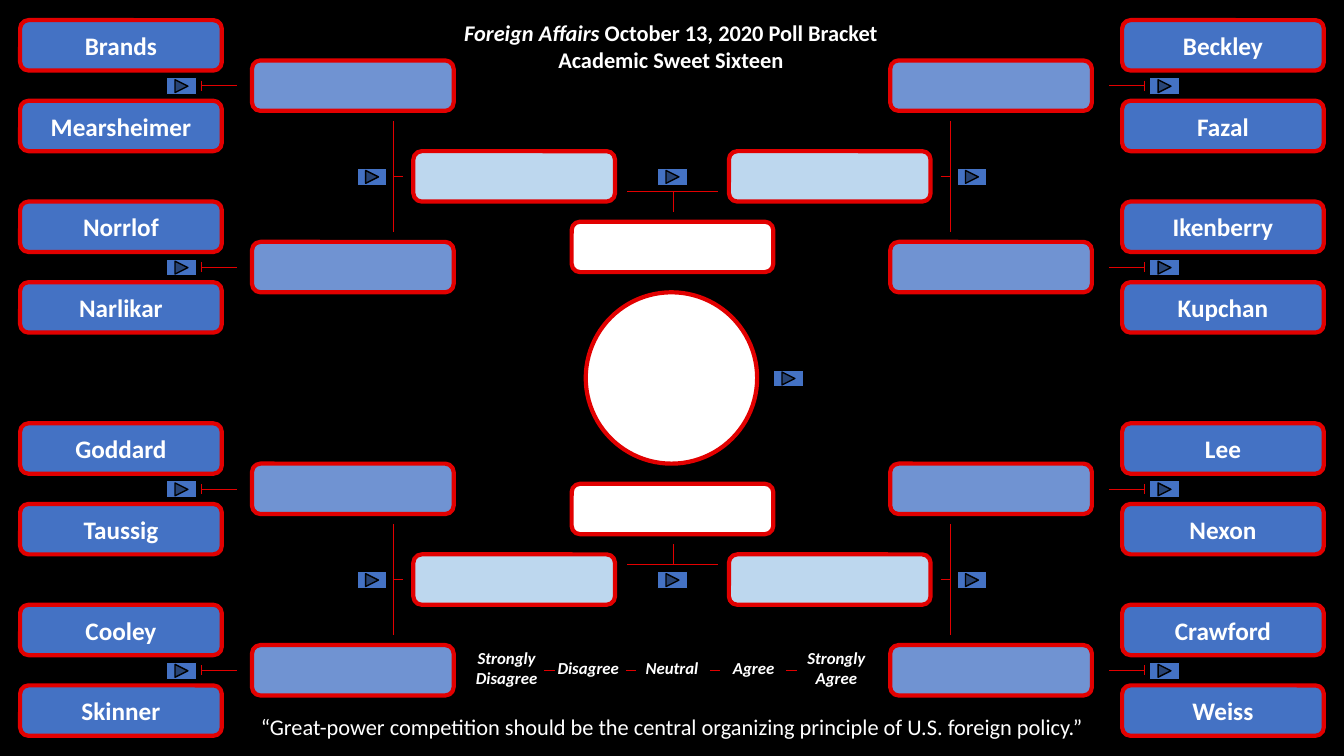
import pptx
import pptx.util
import pptx.dml.color
import pptx.enum.shapes
import pptx.enum.text
import pptx.oxml.ns
from lxml import etree

KIND = pptx.enum.shapes.MSO_SHAPE
WIDE = 13.33
RED, BLUE, MID, PALE, WHITE, BLACK = (
    "E20000", "4472C4", "7093D2", "BDD7EE", "FFFFFF", "000000")


def color(code):
    return pptx.dml.color.RGBColor.from_string(code)


def size(*units):
    """Turn inch grid units into lengths."""
    return [pptx.util.Cm(unit * 2.54) for unit in units]


def flip(x, width):
    """Left edge of the mirrored element."""
    return WIDE - x - width


class Board:
    def __init__(self, slide):
        self.slide = slide
        self.font = {"name": "Calibri", "bold": True, "italic": False}
        back = slide.background.fill
        back.solid()
        back.fore_color.rgb = color(BLACK)

    def label(self, para, text, **style):
        run = para.add_run()
        run.text = text
        for key, value in {**self.font, **style}.items():
            setattr(run.font, key, value)
        run.font.color.rgb = color(WHITE)
        para.alignment = pptx.enum.text.PP_ALIGN.CENTER

    def shape(self, kind, x, y, w, h, fill, edge=RED, weight=3):
        item = self.slide.shapes.add_shape(kind, *size(x, y, w, h))
        item.shadow.inherit = False
        item.fill.solid()
        item.fill.fore_color.rgb = color(fill)
        item.line.color.rgb = color(edge)
        item.line.width = pptx.util.Pt(weight)
        return item

    def slot(self, x, y, fill, name=""):
        item = self.shape(KIND.ROUNDED_RECTANGLE, x, y, 2, 0.5, fill)
        if name:
            frame = item.text_frame
            frame.vertical_anchor = pptx.enum.text.MSO_ANCHOR.MIDDLE
            self.label(frame.paragraphs[0], name, size=pptx.util.Pt(18))

    def button(self, x, y):
        self.shape(KIND.ACTION_BUTTON_FORWARD_OR_NEXT,
                   x, y, 0.3, 0.17, BLUE, BLACK, 1)

    def line(self, x, y, w=0, h=0):
        link = self.slide.shapes.add_connector(
            pptx.enum.shapes.MSO_CONNECTOR.STRAIGHT, *size(x, y, x + w, y + h))
        link.line.color.rgb = color(RED)
        link.line.width = pptx.util.Pt(0.5)
        props = link._element.spPr
        etree.SubElement(props, pptx.oxml.ns.qn("a:effectLst"))

    def text(self, x, y, w, h, lines, points, **style):
        """Each line is a list of (text, extra style) runs."""
        frame = self.slide.shapes.add_textbox(*size(x, y, w, h)).text_frame
        frame.word_wrap = True
        frame.auto_size = pptx.enum.text.MSO_AUTO_SIZE.SHAPE_TO_FIT_TEXT
        for i, runs in enumerate(lines):
            para = frame.add_paragraph() if i else frame.paragraphs[0]
            for words, extra in runs:
                self.label(para, words, size=pptx.util.Pt(points),
                           **{**style, **extra})


def main():
    deck = pptx.Presentation()
    deck.slide_width, deck.slide_height = size(WIDE, 7.5)
    board = Board(deck.slides.add_slide(deck.slide_layouts[6]))

    # First and second rounds: names, slot x, next x, tick x, stub x, button x
    sides = [
        (["Brands", "Mearsheimer", "Norrlof", "Narlikar",
          "Goddard", "Taussig", "Cooley", "Skinner"],
         0.2, 2.5, 2, 2, 1.65),
        (["Beckley", "Fazal", "Ikenberry", "Kupchan",
          "Lee", "Nexon", "Crawford", "Weiss"],
         flip(0.2, 2), flip(2.5, 2), 11.35, 11, 11.4),
    ]
    for names, first, second, tick, stub, push in sides:
        for i, top in enumerate([0, 1.8, 4, 5.8]):
            for j in range(2):
                board.slot(first, top + 0.2 + 0.8 * j, BLUE, names[2 * i + j])
            board.slot(second, top + 0.6, MID)
            board.line(tick, top + 0.8, h=0.1)
            board.line(stub, top + 0.85, w=0.35)
            board.button(push, top + 0.77)

    # Third round, in the upper and lower halves
    for top in (0, 4):
        for x, bar, stub, push in (
                (4.1, 3.9, 3.9, 3.54),
                (flip(4.1, 2), flip(3.9, 0), flip(3.9, 0.1), flip(3.54, 0.3))):
            board.slot(x, top + 1.5, PALE)
            board.line(bar, top + 1.2, h=1.1)
            board.line(stub, top + 1.75, w=0.1)
            board.button(push, top + 1.67)
        board.button(6.52, top + 1.67)

    # Finalists and winner
    for y, bar, stem in ((2.2, 1.9, 1.9), (4.8, 5.6, 5.4)):
        board.slot(5.67, y, WHITE)
        board.line(6.22, bar, w=0.9)
        board.line(6.68, stem, h=0.2)
    board.shape(KIND.OVAL, 5.81, 2.9, 1.7, 1.7, WHITE)
    board.button(7.67, 3.67)

    # Title and poll statement
    board.text(2.49, 0.14, 8.33, 0.64, [
        [("Foreign Affairs", {"italic": True}),
         (" October 13, 2020 Poll Bracket", {})],
        [("Academic Sweet Sixteen", {})]], 16)
    board.text(2.2, 7.03, 8.93, 0.37, [[(
        "“Great-power competition should be the central organizing "
        "principle of U.S. foreign policy.”", {})]], 16, bold=False)

    # Answer scale
    for x, y, w, h, answer in (
            (4.6, 6.38, 0.85, 0.5, "Strongly Disagree"),
            (5.41, 6.48, 0.85, 0.3, "Disagree"),
            (6.26, 6.48, 0.81, 0.3, "Neutral"),
            (7.07, 6.48, 0.81, 0.3, "Agree"),
            (7.89, 6.38, 0.81, 0.5, "Strongly Agree")):
        board.text(x, y, w, h, [[(answer, {})]], 12, italic=True)
    for x in (5.4, 6.21, 7.04, 7.8):
        board.line(x, 6.65, w=0.1)

    deck.save("out.pptx")


if __name__ == "__main__":
    main()
